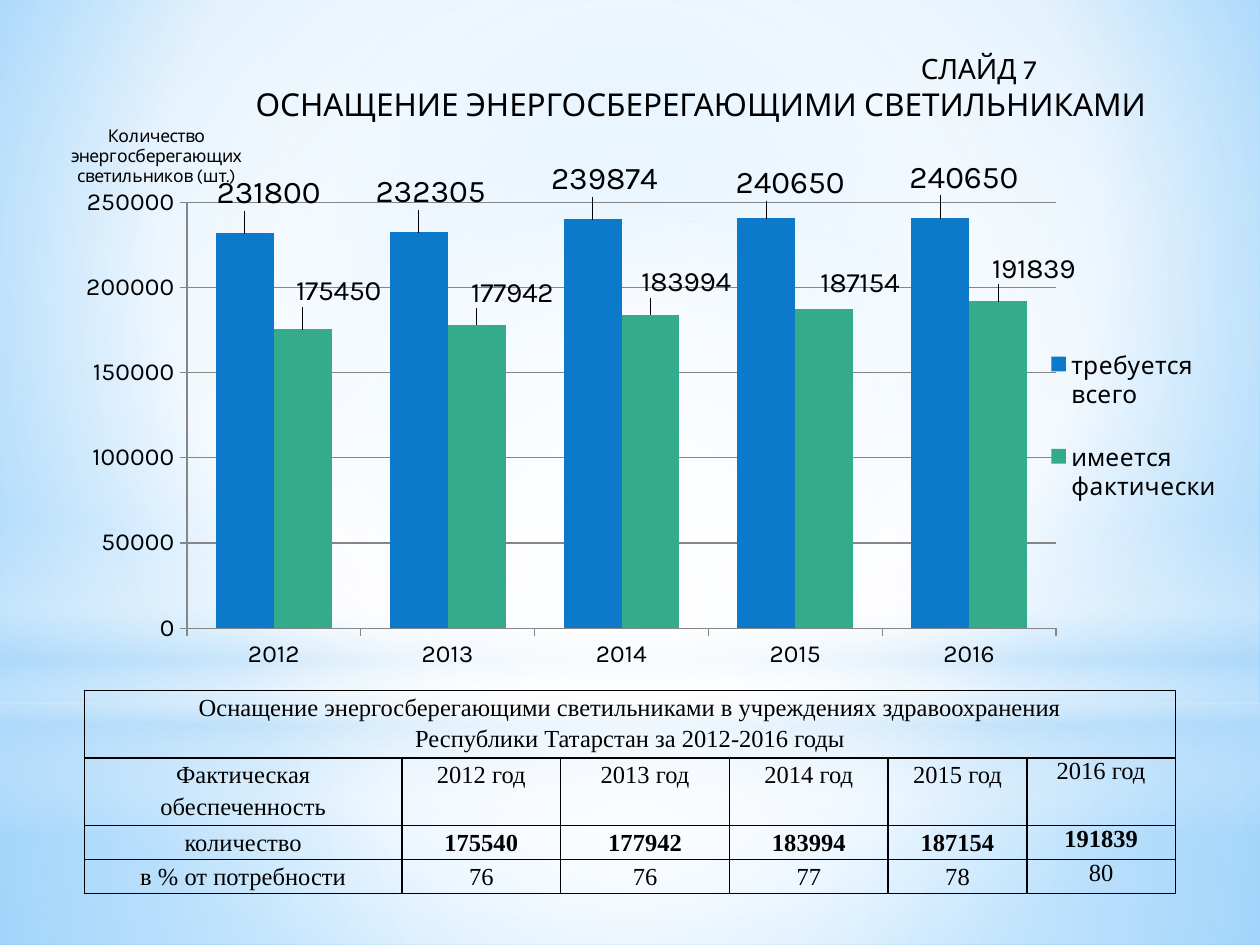
from collections import namedtuple

from lxml import etree
from pptx import Presentation
from pptx.chart.data import CategoryChartData
from pptx.dml.color import RGBColor
from pptx.enum.chart import XL_CHART_TYPE, XL_LABEL_POSITION, XL_LEGEND_POSITION, XL_TICK_MARK
from pptx.enum.shapes import MSO_SHAPE
from pptx.enum.text import PP_ALIGN
from pptx.oxml.ns import qn
from pptx.util import Inches, Pt

COLUMNS = XL_CHART_TYPE.COLUMN_CLUSTERED
ABOVE = XL_LABEL_POSITION.OUTSIDE_END
LEGEND_RIGHT = XL_LEGEND_POSITION.RIGHT
TICK_OUT = XL_TICK_MARK.OUTSIDE
RECT, OVAL = MSO_SHAPE.RECTANGLE, MSO_SHAPE.OVAL
CENTER = PP_ALIGN.CENTER

BLACK = RGBColor(0x00, 0x00, 0x00)
WHITE = RGBColor(0xFF, 0xFF, 0xFF)
GRAY = RGBColor(0x86, 0x86, 0x86)
PALE = RGBColor(0xB4, 0xDC, 0xFA)
SKY = RGBColor(0x9E, 0xD5, 0xFF)
AZURE = RGBColor(0x5B, 0xB9, 0xFF)
BLUE = RGBColor(0x0D, 0x79, 0xCA)
GREEN = RGBColor(0x34, 0xAC, 0x8B)

GRID = Inches(0.01)
PAGE_COLS, PAGE_ROWS = 1000, 750
HEAD_FONT, TABLE_FONT = "Karla", "Times New Roman"

Box = namedtuple("Box", "left top width height")
Series = namedtuple("Series", "name values color size shifts")

YEARS = range(2012, 2017)
SERIES = [
    Series("требуется всего", (231800, 232305, 239874, 240650, 240650), BLUE, 18,
           [(0.02, -0.03), (0.01, -0.03), (0.01, -0.03), (0.02, -0.02), (0.02, -0.03)]),
    Series("имеется фактически", (175450, 177942, 183994, 187154, 191839), GREEN, 16,
           [(0.03, -0.03), (0.03, -0.02), (0.03, -0.02), (0.03, -0.01), (0.03, -0.02)]),
]
TABLE_TITLE = ("Оснащение энергосберегающими светильниками в учреждениях здравоохранения",
               "Республики Татарстан за 2012-2016 годы")
TABLE_ROWS = [
    ["Фактическая обеспеченность", *(f"{year} год" for year in YEARS)],
    ["количество", "175540", "177942", "183994", "187154", "191839"],
    ["в % от потребности", "76", "76", "77", "78", "80"],
]
TABLE_COLS = (252, 126, 134, 126, 110, 118)
TABLE_HEIGHTS = (53, 51, 27, 27)


def on_grid(box):
    """Turn grid columns and rows into slide lengths."""
    return [GRID * part for part in box]


def style(font, size, name=HEAD_FONT, bold=False):
    """Set the face, size, weight and black colour of a font."""
    font.name, font.size, font.bold = name, Pt(size), bold
    font.color.rgb = BLACK


def add_span(para, text, size, name=HEAD_FONT, bold=False):
    """Add one run of styled text to a paragraph."""
    span = para.add_run()
    span.text = text
    style(span.font, size, name, bold)


def set_gradient(fill, element, stops, focus=None):
    """Fill with (position, colour, opacity) stops, radial around focus or downward."""
    fill.gradient()
    grad = element.xpath(".//a:gradFill")[0]
    for child in list(grad):
        grad.remove(child)
    stop_list = etree.SubElement(grad, qn("a:gsLst"))
    for position, color, opacity in stops:
        stop = etree.SubElement(stop_list, qn("a:gs"), pos=str(position * 1000))
        tint = etree.SubElement(stop, qn("a:srgbClr"), val=str(color))
        etree.SubElement(tint, qn("a:alpha"), val=str(opacity * 1000))
    if focus:
        radial = etree.SubElement(grad, qn("a:path"))
        radial.set("path", "circle")
        sides = {side: str(share * 1000) for side, share in zip("ltrb", focus)}
        etree.SubElement(radial, qn("a:fillToRect"), **sides)
    else:
        etree.SubElement(grad, qn("a:lin"), ang="5400000", scaled="0")


def add_glow(page, kind, box, stops, focus=(50, 50, 50, 50)):
    """Add one borderless translucent gradient shape."""
    shape = page.shapes.add_shape(kind, *on_grid(box))
    shape.shadow.inherit = False
    shape.line.fill.background()
    set_gradient(shape.fill, shape.element, stops, focus)


def add_backdrop(page, box):
    """Paint the sky gradient and the layers of light over it."""
    set_gradient(page.background.fill, page.element,
                 [(0, SKY, 100), (60, WHITE, 100), (100, AZURE, 100)], (20, 10, 20, 60))
    horizon = 558
    add_glow(page, RECT, box._replace(top=horizon, height=box.height - horizon),
             [(0, WHITE, 91), (37, WHITE, 76), (100, PALE, 79)])
    add_glow(page, RECT, box._replace(height=horizon),
             [(0, WHITE, 89), (48, WHITE, 62), (100, PALE, 79)])
    add_glow(page, RECT, box._replace(top=412, height=250),
             [(0, WHITE, 0), (29, WHITE, 30), (45, PALE, 40),
              (55, WHITE, 26), (65, PALE, 60), (100, WHITE, 0)], None)
    add_glow(page, OVAL, box._replace(top=175, height=horizon),
             [(0, WHITE, 100), (56, WHITE, 0)])


def add_heading(page, box):
    """Add the slide number line and the heading below it."""
    frame = page.shapes.add_textbox(*on_grid(box)).text_frame
    frame.word_wrap = True
    number = frame.paragraphs[0]
    add_span(number, "СЛАЙД 7", 16)
    number._p.get_or_add_pPr().set("marL", str(GRID * 528))
    add_span(frame.add_paragraph(), "ОСНАЩЕНИЕ ЭНЕРГОСБЕРЕГАЮЩИМИ СВЕТИЛЬНИКАМИ", 18)


def set_layout(element, index, **values):
    """Give a chart part a manual layout as the child at index."""
    for old in element.findall(qn("c:layout")):
        element.remove(old)
    layout = etree.Element(qn("c:layout"))
    manual = etree.SubElement(layout, qn("c:manualLayout"))
    for name, value in values.items():
        etree.SubElement(manual, qn(f"c:{name}"), val=str(value))
    element.insert(index, layout)


def style_axes(chart):
    """Style both axes, the gridlines and the value title."""
    scale = chart.value_axis
    scale.minimum_scale, scale.maximum_scale, scale.major_unit = 0, 250000, 50000
    scale.has_major_gridlines = True
    for axis in (chart.category_axis, scale):
        axis.major_tick_mark = TICK_OUT
        style(axis.tick_labels.font, 14)
    for line in (chart.category_axis.format.line, scale.format.line,
                 scale.major_gridlines.format.line):
        line.color.rgb = GRAY
        line.width = Pt(0.75)
    title = scale.axis_title
    add_span(title.text_frame.paragraphs[0],
             "Количество энергосберегающих светильников (шт.)", 10)
    body = title.element.xpath(".//a:bodyPr")[0]
    body.set("rot", "0")
    body.set("vert", "horz")
    set_layout(title.element, 1, xMode="edge", yMode="edge", x=0.02, y=0.01)


def add_column_chart(page, box):
    """Add the chart of required and available lamps."""
    data = CategoryChartData()
    data.categories = [str(year) for year in YEARS]
    for entry in SERIES:
        data.add_series(entry.name, entry.values)
    chart = page.shapes.add_chart(COLUMNS, *on_grid(box), data).chart
    chart.has_title = False
    style(chart.font, 18)
    style_axes(chart)
    plot = chart.plots[0]
    plot.gap_width, plot.overlap, plot.vary_by_categories = 100, 0, False
    set_layout(chart.element.xpath(".//c:plotArea")[0], 0, layoutTarget="inner",
               xMode="edge", yMode="edge", x=0.12, y=0.15, w=0.73, h=0.74)
    chart.has_legend = True
    legend = chart.legend
    legend.position = LEGEND_RIGHT
    legend.include_in_layout = False
    style(legend.font, 14)
    set_layout(chart.element.xpath(".//c:legend")[0], 1,
               xMode="edge", yMode="edge", x=0.84, y=0.35, w=0.15, h=0.38)
    for entry, series in zip(SERIES, plot.series):
        series.format.fill.solid()
        series.format.fill.fore_color.rgb = entry.color
        labels = series.data_labels
        labels.show_value, labels.position = True, ABOVE
        style(labels.font, entry.size)
        for index in range(len(entry.values)):
            label = series.points[index].data_label
            label.position = ABOVE
            style(label.font, entry.size)
    shifts = [shift for entry in SERIES for shift in entry.shifts]
    for label, (x, y) in zip(chart.element.xpath(".//c:dLbl"), shifts):
        set_layout(label, 1, x=x, y=y)


def fill_cell(cell, lines, bold=False, spacing=1.15):
    """Write centred lines into a clear cell with black borders."""
    cell.margin_left = cell.margin_right = GRID * 6
    cell.margin_top = cell.margin_bottom = 0
    props = cell._tc.get_or_add_tcPr()
    for side in ("lnL", "lnR", "lnT", "lnB"):
        line = etree.SubElement(props, qn(f"a:{side}"), w=str(Pt(1)))
        solid = etree.SubElement(line, qn("a:solidFill"))
        etree.SubElement(solid, qn("a:srgbClr"), val=str(BLACK))
    cell.fill.background()
    for index, text in enumerate(lines):
        para = cell.text_frame.add_paragraph() if index else cell.text_frame.paragraphs[0]
        para.alignment, para.line_spacing = CENTER, spacing
        add_span(para, text, 14, TABLE_FONT, bold)


def add_supply_table(page, box):
    """Add the table of lamp supply by year."""
    table = page.shapes.add_table(len(TABLE_HEIGHTS), len(TABLE_COLS), *on_grid(box)).table
    table.first_row = table.horz_banding = False
    for column, width in zip(table.columns, TABLE_COLS):
        column.width = GRID * width
    for row, height in zip(table.rows, TABLE_HEIGHTS):
        row.height = GRID * height
    last = len(TABLE_COLS) - 1
    table.cell(0, 0).merge(table.cell(0, last))
    for col in range(last + 1):
        fill_cell(table.cell(0, col), () if col else TABLE_TITLE)
    for row, texts in enumerate(TABLE_ROWS, 1):
        for col, text in enumerate(texts):
            fill_cell(table.cell(row, col), [text], row == 2 and col > 0,
                      1.0 if col == last else 1.15)


def main():
    """Build the slide and save the deck."""
    deck = Presentation()
    deck.slide_width, deck.slide_height = GRID * PAGE_COLS, GRID * PAGE_ROWS
    page = deck.slides.add_slide(deck.slide_layouts[6])
    add_backdrop(page, Box(0, 0, PAGE_COLS, PAGE_ROWS))
    add_heading(page, Box(193, 36, 780, 101))
    add_supply_table(page, Box(67, 548, sum(TABLE_COLS), sum(TABLE_HEIGHTS)))
    add_column_chart(page, Box(35, 92, 945, 457))
    deck.save("out.pptx")


if __name__ == "__main__":
    main()
